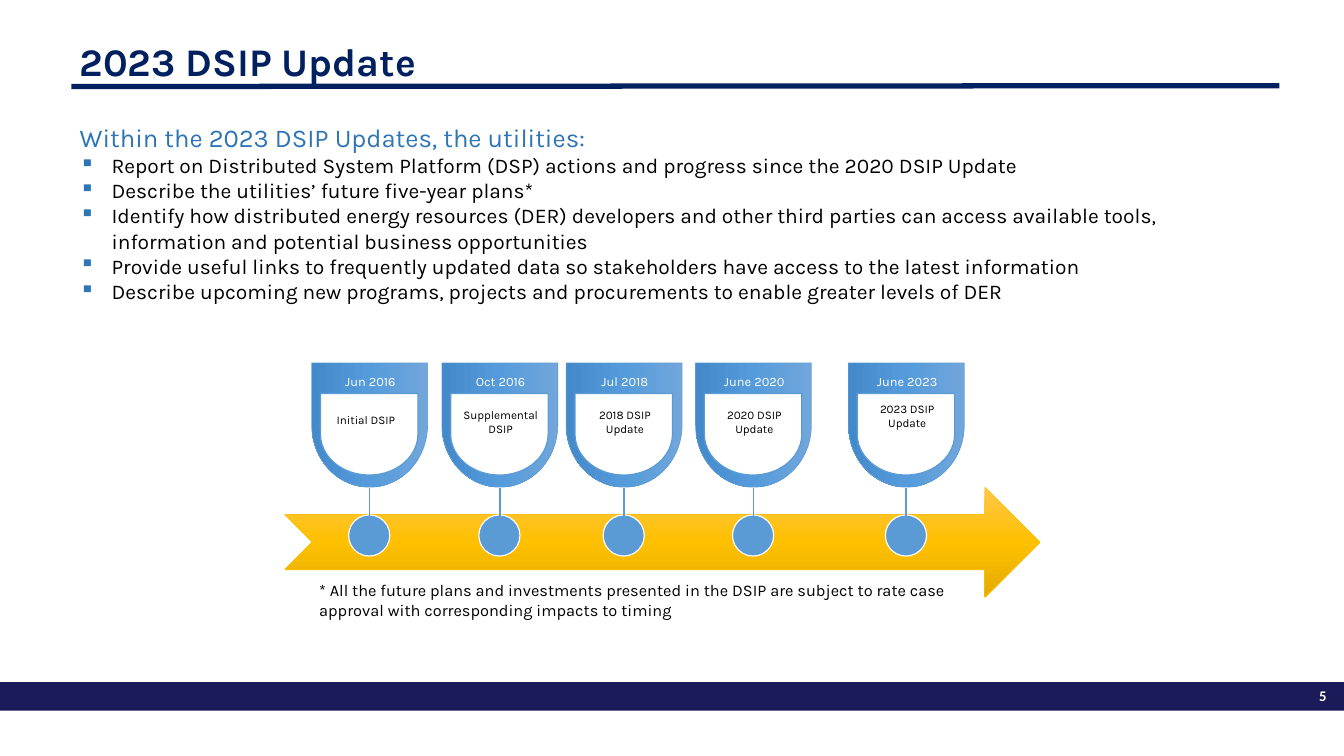
from copy import deepcopy

from lxml import etree
from pptx import Presentation
from pptx.dml.color import RGBColor
from pptx.enum.shapes import MSO_CONNECTOR, MSO_SHAPE
from pptx.enum.text import MSO_ANCHOR, PP_ALIGN
from pptx.oxml.ns import qn
from pptx.util import Inches, Pt

RECT = MSO_SHAPE.RECTANGLE
SHIELD = MSO_SHAPE.FLOWCHART_DELAY
ARROW = MSO_SHAPE.NOTCHED_RIGHT_ARROW
DOT = MSO_SHAPE.OVAL
STRAIGHT = MSO_CONNECTOR.STRAIGHT
LEFT, CENTER, RIGHT = PP_ALIGN.LEFT, PP_ALIGN.CENTER, PP_ALIGN.RIGHT
TOP, MIDDLE = MSO_ANCHOR.TOP, MSO_ANCHOR.MIDDLE

COLUMNS, ROWS = 16, 9
WHITE, BLACK, NAVY, BAND = "FFFFFF", "000000", "002060", "1B1B59"
BLUE, HEADING_BLUE, GOLD = "5B9BD5", "2E75B6", "FFC000"
BLUE_FADE = ["71A6DB", "559BDB", "448ACA"]
GOLD_FADE = ["FFC64B", GOLD, "E3AB00"]

HEADING = "Within the 2023 DSIP Updates, the utilities:"
ACTIONS = [
    "Report on Distributed System Platform (DSP) actions and progress since the 2020 DSIP Update",
    "Describe the utilities’ future five-year plans*",
    "Identify how distributed energy resources (DER) developers and other third parties can "
    "access available tools, information and potential business opportunities",
    "Provide useful links to frequently updated data so stakeholders have access to the latest information",
    "Describe upcoming new programs, projects and procurements to enable greater levels of DER",
]
FOOTNOTE = ("* All the future plans and investments presented in the DSIP are subject to rate case "
            "approval with corresponding impacts to timing")
MILESTONES = [
    (4.4, "Jun 2016", "Initial DSIP", 4.87, 1, LEFT),
    (5.95, "Oct 2016", "Supplemental DSIP", 4.8, 1.2, CENTER),
    (7.43, "Jul 2018", "2018 DSIP Update", 4.8, 1, CENTER),
    (8.97, "June 2020", "2020 DSIP Update", 4.8, 1.2, CENTER),
    (10.79, "June 2023", "2023 DSIP Update", 4.73, 1.2, CENTER),
]


def color(value):
    return RGBColor.from_string(value)


class SlideBuilder:
    font = "Karla"

    def __init__(self, deck):
        self.column = deck.slide_width / COLUMNS
        self.row = deck.slide_height / ROWS
        self.slide = deck.slides.add_slide(deck.slide_layouts[6])

    def place(self, left, top, width, height):
        return (round(left * self.column), round(top * self.row),
                round(width * self.column), round(height * self.row))

    def shape(self, kind, area, fill, outline=None, weight=1, turn=0):
        item = self.slide.shapes.add_shape(kind, *self.place(*area))
        item.shadow.inherit = False
        item.rotation = turn
        if isinstance(fill, list):
            self.fade(item, fill)
        else:
            item.fill.solid()
            item.fill.fore_color.rgb = color(fill)
        if outline:
            item.line.color.rgb = color(outline)
            item.line.width = Pt(weight)
        else:
            item.line.fill.background()

    def fade(self, item, shades):
        item.fill.gradient()
        item.fill.gradient_angle = 270
        stop_list = item._element.spPr.find(qn("a:gradFill")).find(qn("a:gsLst"))
        while len(stop_list) < len(shades):
            stop_list.append(deepcopy(stop_list[-1]))
        for index, (stop, shade) in enumerate(zip(item.fill.gradient_stops, shades)):
            stop.position = index / (len(shades) - 1)
            stop.color.rgb = color(shade)

    def line(self, start, end, stroke, weight):
        x1, y1, x2, y2 = self.place(*start, *end)
        item = self.slide.shapes.add_connector(STRAIGHT, x1, y1, x2, y2)
        item.line.color.rgb = color(stroke)
        item.line.width = Pt(weight)
        etree.SubElement(item._element.spPr, qn("a:effectLst"))

    def frame(self, area, anchor=TOP, inset=None):
        frame = self.slide.shapes.add_textbox(*self.place(*area)).text_frame
        frame.word_wrap = True
        frame.vertical_anchor = anchor
        if inset is not None:
            frame.margin_left = frame.margin_right = inset
            frame.margin_top = frame.margin_bottom = inset
        return frame

    def add_words(self, paragraph, words, size, ink, align=LEFT, bold=False, font=None):
        paragraph.alignment = align
        run = paragraph.add_run()
        run.text = words
        run.font.name = font or self.font
        run.font.size = Pt(size)
        run.font.bold = bold
        run.font.color.rgb = color(ink)

    def text(self, area, words, size, ink, align=LEFT, bold=False, font=None,
             anchor=TOP, inset=None, spacing=None):
        paragraph = self.frame(area, anchor, inset).paragraphs[0]
        paragraph.line_spacing = spacing
        self.add_words(paragraph, words, size, ink, align, bold, font)

    def bullets(self, area, heading, items):
        frame = self.frame(area)
        self.add_words(frame.paragraphs[0], heading, 22, HEADING_BLUE)
        for words in items:
            paragraph = frame.add_paragraph()
            properties = paragraph._p.get_or_add_pPr()
            properties.set("marL", str(Inches(0.38)))
            properties.set("indent", str(-Inches(0.38)))
            tint = etree.SubElement(properties, qn("a:buClr"))
            etree.SubElement(tint, qn("a:srgbClr"), val=HEADING_BLUE)
            etree.SubElement(properties, qn("a:buChar"), char="▪")
            self.add_words(paragraph, words, 18, BLACK)

    def milestone(self, center, date, caption, caption_top, caption_width, align):
        self.shape(SHIELD, (center - 0.74, 4.37, 1.48, 1.38), BLUE_FADE, BLUE, 0.5, 90)
        self.shape(SHIELD, (center - 0.49, 4.59, 0.97, 1.16), WHITE, BLUE, 1, 90)
        self.shape(DOT, (center - 0.25, 6.13, 0.49, 0.49), BLUE, WHITE)
        self.line((center, 5.81), (center, 6.38), BLUE, 1.5)
        self.text((center - 0.49, 4.4, 1, 0.29), date, 11, WHITE, CENTER)
        self.text((center + 0.01 - caption_width / 2, caption_top, caption_width, 0.61),
                  caption, 10, BLACK, align)


def main():
    deck = Presentation()
    deck.slide_width, deck.slide_height = Inches(16), Inches(9)
    page = SlideBuilder(deck)
    page.shape(RECT, (0, 8.12, 16, 0.34), BAND)
    page.text((15.23, 8.13, 0.66, 0.31), "5", 12.6, WHITE, RIGHT, True, "Calibri")
    page.line((0.85, 1.03), (15.23, 1.02), NAVY, 4.5)
    page.text((0.85, 0.48, 14.38, 0.57), "2023 DSIP Update", 33.5, NAVY,
              bold=True, anchor=MIDDLE, spacing=0.9)
    page.bullets((0.85, 1.4, 14.38, 2.29), HEADING, ACTIONS)
    page.shape(ARROW, (3.39, 5.8, 8.99, 1.31), GOLD_FADE, GOLD, 0.5)
    for milestone in MILESTONES:
        page.milestone(*milestone)
    page.text((3.8, 6.91, 7.87, 0.47), FOOTNOTE, 14, BLACK, inset=0)
    deck.save("out.pptx")


if __name__ == "__main__":
    main()
